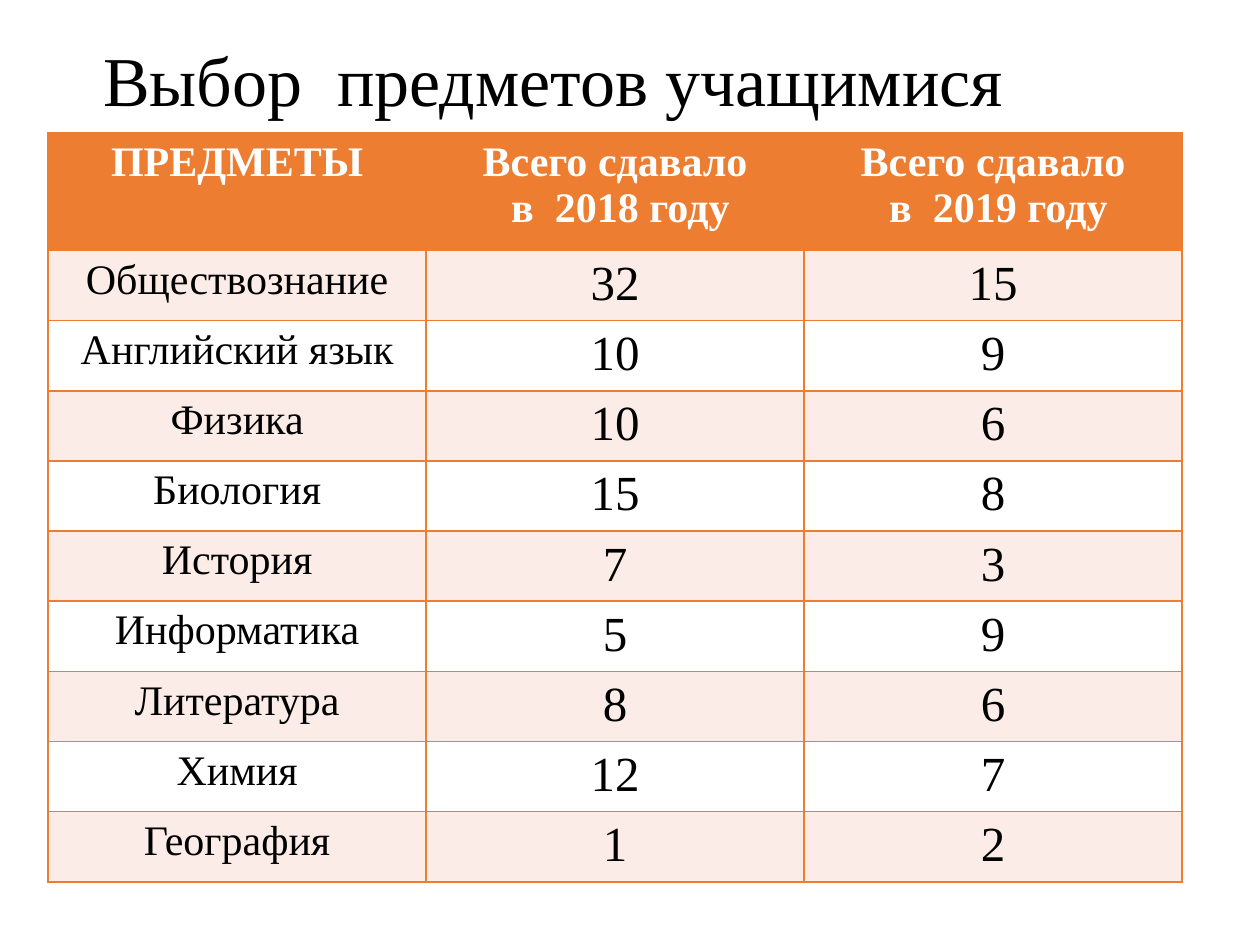
from dataclasses import dataclass

from lxml import etree
from pptx import Presentation
from pptx.dml.color import RGBColor
from pptx.enum.text import MSO_ANCHOR, PP_ALIGN
from pptx.oxml.ns import qn
from pptx.util import Cm, Pt

MIDDLE = MSO_ANCHOR.MIDDLE
CENTER = PP_ALIGN.CENTER


@dataclass(frozen=True)
class Theme:
    font: str = "Times New Roman"
    accent: str = "ED7D31"
    band: str = "FBECE7"
    light: str = "FFFFFF"
    text: str = "000000"
    title_size: int = 40
    label_size: int = 24
    number_size: int = 28
    border_width: float = 0.96


THEME = Theme()

TITLE = "Выбор  предметов учащимися"
HEADERS = ["ПРЕДМЕТЫ", "Всего сдавало\n в  2018 году", "Всего сдавало\n в  2019 году"]
SUBJECTS = [
    ("Обществознание", 32, 15),
    ("Английский язык", 10, 9),
    ("Физика", 10, 6),
    ("Биология", 15, 8),
    ("История", 7, 3),
    ("Информатика", 5, 9),
    ("Литература", 8, 6),
    ("Химия", 12, 7),
    ("География", 1, 2),
]

COLUMN_WIDTH = Cm(7.62)
HEADER_HEIGHT = Cm(2.38)
SUBJECT_HEIGHT = Cm(1.38)


def style_paragraph(paragraph, size, color, bold=False):
    font = paragraph.font
    font.name = THEME.font
    font.size = Pt(size)
    font.bold = bold
    font.color.rgb = RGBColor.from_string(color)


def add_title(slide):
    title = slide.shapes.add_textbox(Cm(1.83), Cm(0.33), Cm(21.77), Cm(2.72))
    frame = title.text_frame
    frame.word_wrap = True
    frame.vertical_anchor = MIDDLE
    frame.text = TITLE
    paragraph = frame.paragraphs[0]
    paragraph.line_spacing = 0.9
    style_paragraph(paragraph, THEME.title_size, THEME.text)


def add_borders(cell):
    """Outline all four sides; border elements must precede the cell fill."""
    properties = cell._tc.get_or_add_tcPr()
    for position, side in enumerate(("a:lnL", "a:lnR", "a:lnT", "a:lnB")):
        border = etree.Element(qn(side), w=str(Pt(THEME.border_width)))
        fill = etree.SubElement(border, qn("a:solidFill"))
        etree.SubElement(fill, qn("a:srgbClr"), val=THEME.accent)
        properties.insert(position, border)


def fill_cell(cell, text, size, color, background, bold=False):
    cell.margin_bottom = Cm(0.1)
    cell.fill.solid()
    cell.fill.fore_color.rgb = RGBColor.from_string(background)
    add_borders(cell)
    cell.text = text
    for paragraph in cell.text_frame.paragraphs:
        paragraph.alignment = CENTER
        style_paragraph(paragraph, size, color, bold)


def add_subject_table(slide):
    row_count, column_count = len(SUBJECTS) + 1, len(HEADERS)
    table = slide.shapes.add_table(
        row_count, column_count, Cm(0.97), Cm(2.67),
        COLUMN_WIDTH * column_count,
        HEADER_HEIGHT + SUBJECT_HEIGHT * len(SUBJECTS),
    ).table
    for column in table.columns:
        column.width = COLUMN_WIDTH
    for row in table.rows:
        row.height = SUBJECT_HEIGHT
    table.rows[0].height = HEADER_HEIGHT

    for column, header in enumerate(HEADERS):
        fill_cell(table.cell(0, column), header, THEME.label_size,
                  THEME.light, THEME.accent, bold=True)
    for row, subject in enumerate(SUBJECTS, start=1):
        background = THEME.band if row % 2 else THEME.light
        for column, value in enumerate(subject):
            size = THEME.number_size if column else THEME.label_size
            fill_cell(table.cell(row, column), str(value), size, THEME.text, background)


def main():
    presentation = Presentation()
    presentation.slide_width = Cm(25.4)
    presentation.slide_height = Cm(19.05)
    slide = presentation.slides.add_slide(presentation.slide_layouts[6])
    add_title(slide)
    add_subject_table(slide)
    presentation.save("out.pptx")


if __name__ == "__main__":
    main()
